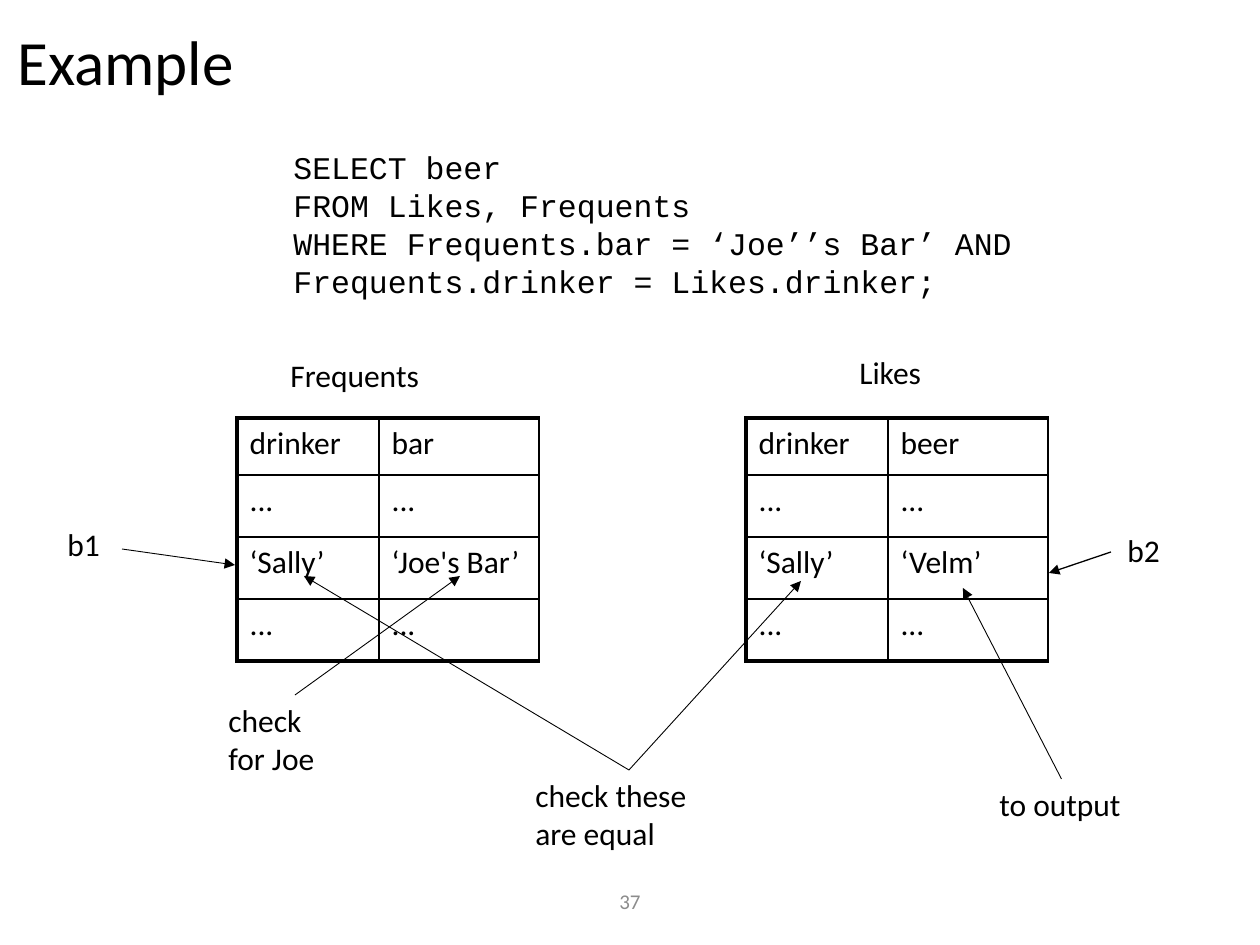
from lxml.etree import SubElement
from pptx import Presentation
from pptx.dml.color import RGBColor
from pptx.enum.shapes import MSO_CONNECTOR
from pptx.enum.text import MSO_ANCHOR, PP_ALIGN
from pptx.oxml import parse_xml
from pptx.oxml.ns import nsdecls, qn
from pptx.util import Emu, Pt

COLORS = {"ink": "000000", "number": "8C8C8C"}
TOP = 0
THIN, THICK = 1, 2.25


def px(n):
    return Emu(round(n * 914400 / 126))


class Deck:
    """Holds the text style and the current slide."""

    def __init__(self, width, height):
        self.prs = Presentation()
        self.prs.slide_width, self.prs.slide_height = px(width), px(height)
        self.s = self.prs.slides.add_slide(self.prs.slide_layouts[6])
        self.font, self.size = "Calibri", 18

    def run(self, p, text, size=None, font=None, color="ink"):
        r = p.add_run()
        r.text = text
        r.font.size = Pt(size or self.size)
        r.font.name = font or self.font
        r.font.color.rgb = RGBColor.from_string(COLORS[color])

    def text(self, box, paragraphs, wrap=True, anchor=MSO_ANCHOR.TOP,
             align=PP_ALIGN.LEFT, spacing=None, **style):
        """Add a text box; a newline inside a paragraph is a line break."""
        sp = self.s.shapes.add_textbox(*map(px, box))
        tf = sp.text_frame
        tf.word_wrap, tf.vertical_anchor = wrap, anchor
        for i, paragraph in enumerate(paragraphs):
            p = tf.add_paragraph() if i else tf.paragraphs[0]
            p.alignment, p.line_spacing = align, spacing
            for j, line in enumerate(paragraph.split("\n")):
                if j:
                    p.add_line_break()
                self.run(p, line, **style)
        return sp

    def arrow(self, start, end, width=0.5, source=None):
        """Draw an arrow, joined to the top of source if one is given."""
        c = self.s.shapes.add_connector(
            MSO_CONNECTOR.STRAIGHT, *map(px, start + end))
        if source is not None:
            c.begin_connect(source, TOP)
        c.line.width = Pt(width)
        c.line.color.rgb = RGBColor.from_string(COLORS["ink"])
        SubElement(c.line._get_or_add_ln(), qn("a:tailEnd"), type="triangle")
        SubElement(c._element.spPr, qn("a:effectLst"))

    def borders(self, cell, widths):
        """Set the left, right, top and bottom border widths in points."""
        tc_pr = cell._tc.get_or_add_tcPr()
        for i, (side, width) in enumerate(zip("LRTB", widths)):
            tc_pr.insert(i, parse_xml(
                f'<a:ln{side} {nsdecls("a")} w="{Pt(width)}"><a:solidFill>'
                f'<a:srgbClr val="{COLORS["ink"]}"/></a:solidFill></a:ln{side}>'))

    def table(self, left, top, cols, row_heights, rows):
        table = self.s.shapes.add_table(
            len(rows), len(cols), px(left), px(top),
            px(sum(cols)), px(sum(row_heights))).table
        table.first_row = table.horz_banding = False
        for column, width in zip(table.columns, cols):
            column.width = px(width)
        for i, (row, height) in enumerate(zip(rows, row_heights)):
            table.rows[i].height = px(height)
            for j, value in enumerate(row):
                cell = table.cell(i, j)
                cell.fill.background()
                self.run(cell.text_frame.paragraphs[0], value)
                self.borders(cell, (
                    THIN if j else THICK, THIN,
                    THIN if i else THICK,
                    THICK if i == len(rows) - 1 else THIN))


def main():
    deck = Deck(1260, 945)
    deck.text((417, 876, 426, 50), ["37"], anchor=MSO_ANCHOR.MIDDLE,
              align=PP_ALIGN.CENTER, size=12, color="number")
    deck.text((5, 3, 1240, 125), ["Example"], anchor=MSO_ANCHOR.MIDDLE,
              spacing=0.9, size=36)
    deck.text((281, 142, 756, 170), [
        "SELECT beer",
        "FROM Likes, Frequents",
        "WHERE Frequents.bar = ‘Joe’’s Bar’ AND\nFrequents.drinker = Likes.drinker;",
    ], font="Courier New")

    dots = ("...", "...")
    for left, heading, match in (
        (237, "bar", "‘Joe's Bar’"),
        (746, "beer", "‘Velm’"),
    ):
        deck.table(left, 418, (142, 160), (57, 62, 62, 62),
                   [("drinker", heading), dots, ("‘Sally’", match), dots])
    deck.text((278, 350, 208, 50), ["Frequents"])
    deck.text((847, 347, 88, 50), ["Likes"], wrap=False)

    deck.text((55, 519, 58, 50), ["b1"], wrap=False)
    deck.arrow((122, 549), (235, 565))
    deck.text((1115, 525, 58, 50), ["b2"], wrap=False)
    deck.arrow((1111, 552), (1049, 573), width=0.75)

    for box, lines, wrap, targets in (
        ((216, 695, 158, 89), ["check", "for Joe"], True, [(460, 576)]),
        ((523, 770, 212, 89), ["check these", "are equal"], True,
         [(304, 576), (801, 581)]),
        ((987, 779, 149, 50), ["to output"], False, [(963, 588)]),
    ):
        note = deck.text(box, lines, wrap=wrap)
        left, top, width, _ = box
        for target in targets:
            deck.arrow((left + width // 2, top), target, source=note)

    deck.prs.save("out.pptx")


if __name__ == "__main__":
    main()
